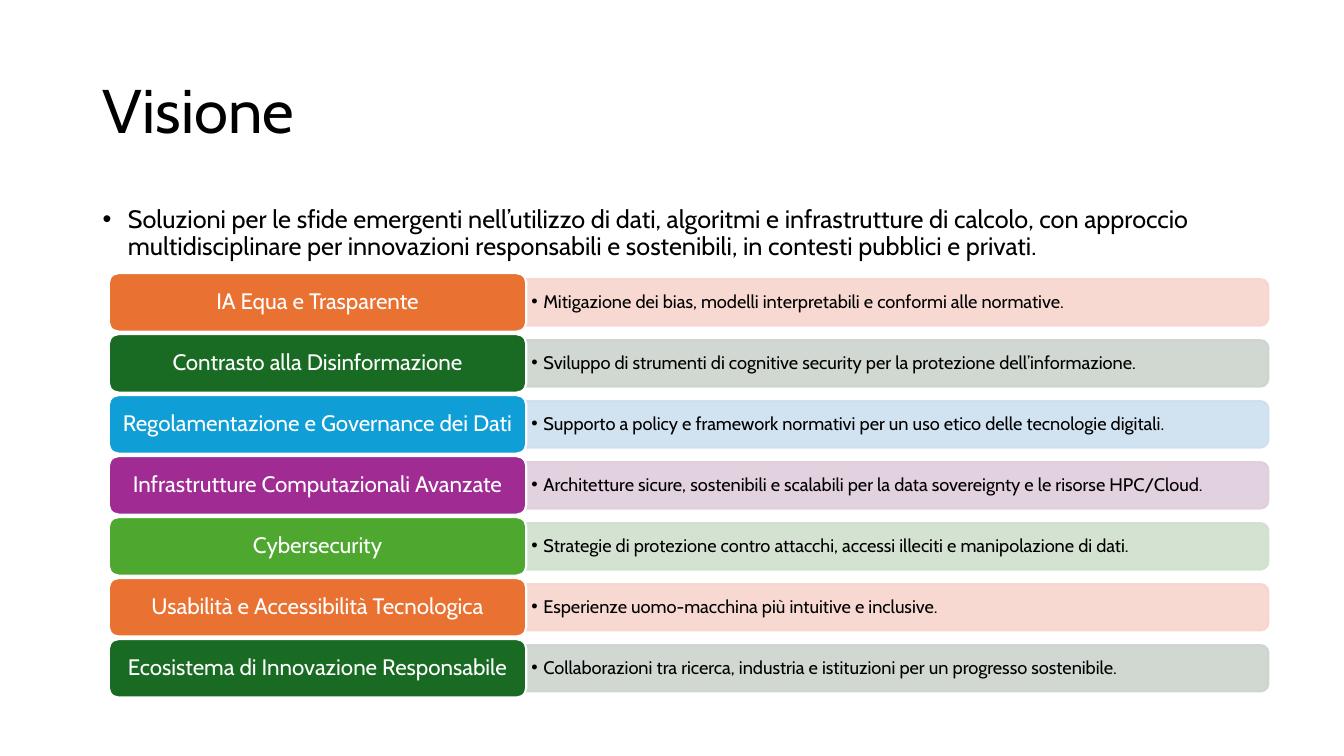
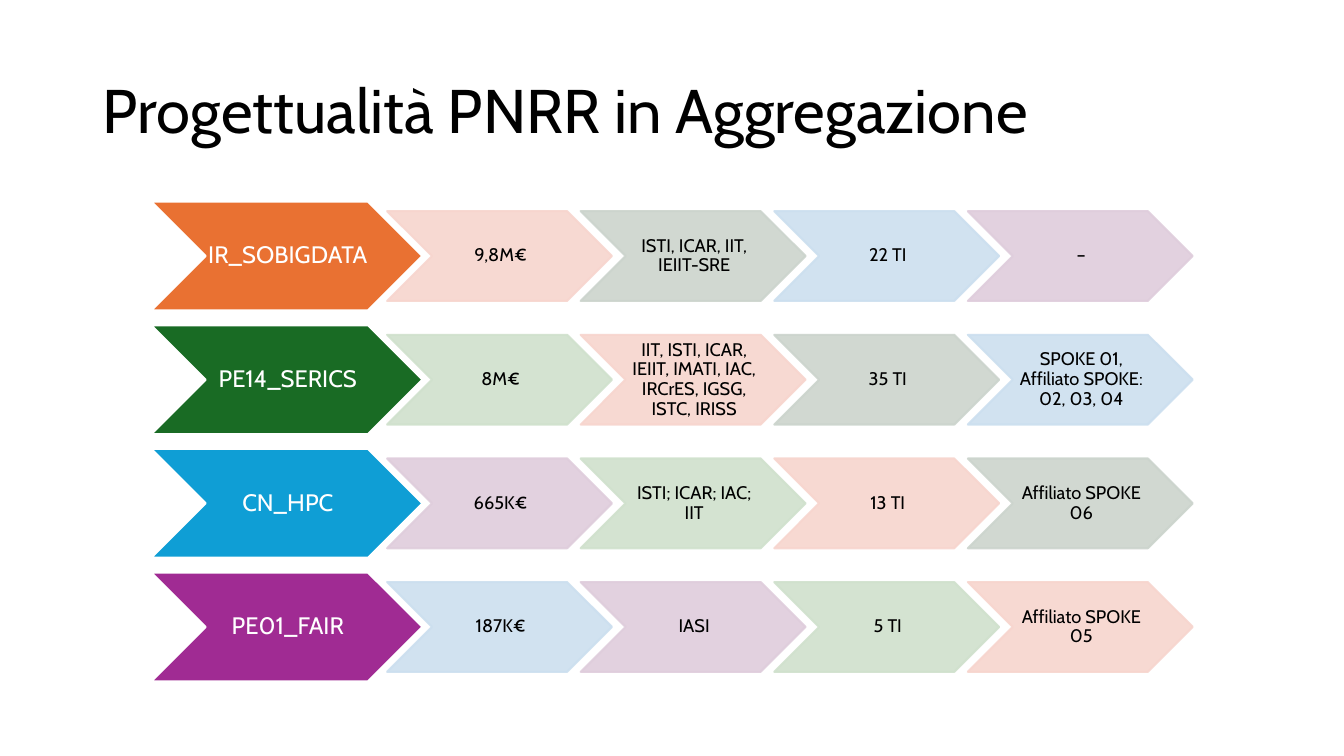
from lxml.etree import SubElement
from pptx import Presentation
from pptx.dml.color import RGBColor
from pptx.enum.shapes import MSO_SHAPE
from pptx.enum.text import MSO_ANCHOR, MSO_AUTO_SIZE, PP_ALIGN
from pptx.oxml.ns import qn
from pptx.util import Inches, Pt

FONT = "Cabin"
BLACK, WHITE = "000000", "FFFFFF"
DARK = ["E97132", "196B24", "0F9ED5", "A02B93", "4EA72E"]
PALE = ["F7D5CE", "CCD4CD", "CCDFEF", "DFCDDC", "D0E1CD"]
TITLE = (0.92, 0.4, 11.5, 1.45)

GOALS = [
    ("IA Equa e Trasparente", "Mitigazione dei bias, modelli interpretabili e conformi alle normative."),
    ("Contrasto alla Disinformazione",
     "Sviluppo di strumenti di cognitive security per la protezione dell’informazione."),
    ("Regolamentazione e Governance dei Dati",
     "Supporto a policy e framework normativi per un uso etico delle tecnologie digitali."),
    ("Infrastrutture Computazionali Avanzate",
     "Architetture sicure, sostenibili e scalabili per la data sovereignty e le risorse HPC/Cloud."),
    ("Cybersecurity", "Strategie di protezione contro attacchi, accessi illeciti e manipolazione di dati."),
    ("Usabilità e Accessibilità Tecnologica", "Esperienze uomo-macchina più intuitive e inclusive."),
    ("Ecosistema di Innovazione Responsabile",
     "Collaborazioni tra ricerca, industria e istituzioni per un progresso sostenibile."),
]
INTRO = ("Soluzioni per le sfide emergenti nell’utilizzo di dati, algoritmi e infrastrutture di calcolo, "
         "con approccio multidisciplinare per innovazioni responsabili e sostenibili, "
         "in contesti pubblici e privati.")
GRANTS = [
    ("IR_SOBIGDATA", "9,8M€", "ISTI, ICAR, IIT, IEIIT-SRE", "22 TI", "–"),
    ("PE14_SERICS", "8M€", "IIT, ISTI, ICAR, IEIIT, IMATI, IAC, IRCrES, IGSG, ISTC, IRISS", "35 TI",
     "SPOKE 01, Affiliato SPOKE: 02, 03, 04"),
    ("CN_HPC", "665K€", "ISTI; ICAR; IAC; IIT", "13 TI", "Affiliato SPOKE 06"),
    ("PE01_FAIR", "187K€", "IASI", "5 TI", "Affiliato SPOKE 05"),
]


def tint(code):
    return RGBColor.from_string(code)


def place(box):
    return [Inches(side) for side in box]


def write(frame, words, size, code=BLACK, pads=(0.1, 0.05, 0.1, 0.05),
          align=PP_ALIGN.LEFT, anchor=MSO_ANCHOR.MIDDLE, indent=0):
    frame.word_wrap = True
    frame.auto_size = MSO_AUTO_SIZE.NONE
    frame.vertical_anchor = anchor
    frame.margin_left, frame.margin_top, frame.margin_right, frame.margin_bottom = place(pads)
    para = frame.paragraphs[0]
    para.alignment = align
    para.line_spacing = 0.9
    if indent:
        props = para._p.get_or_add_pPr()
        props.set("marL", str(Inches(indent)))
        props.set("indent", str(-Inches(indent)))
        SubElement(props, qn("a:buFont"), typeface="Arial")
        SubElement(props, qn("a:buChar"), char="•")
    run = para.add_run()
    run.text = words
    run.font.name = FONT
    run.font.size = Pt(size)
    run.font.color.rgb = tint(code)


def draw(slide, kind, box, fill, edge, alpha=100):
    shape = slide.shapes.add_shape(kind, *place(box))
    shape.shadow.inherit = False
    shape.fill.solid()
    shape.fill.fore_color.rgb = tint(fill)
    shape.line.color.rgb = tint(edge)
    shape.line.width = Pt(1.5)
    if alpha < 100:
        for node in shape.element.spPr.iter(qn("a:srgbClr")):
            SubElement(node, qn("a:alpha"), val=str(alpha * 1000))
    return shape


def label(slide, words, box, size, **style):
    text = slide.shapes.add_textbox(*place(box))
    write(text.text_frame, words, size, **style)


def start(deck, words):
    slide = deck.slides.add_slide(deck.slide_layouts[5])
    title = slide.shapes.title
    title.left, title.top, title.width, title.height = place(TITLE)
    write(title.text_frame, words, 44)
    return slide


def goal(slide, box, name, note, dark, pale):
    left, top, width, height = box
    head, thick = 4.14, 0.46
    long = width - head
    mid = top + height / 2
    band = (left + head + (long - thick) / 2, mid - long / 2, thick, long)
    bar = draw(slide, MSO_SHAPE.ROUND_2_SAME_RECTANGLE, band, pale, pale, 90)
    bar.rotation = 90
    label(slide, note, (left + head, mid - 0.21, long - 0.02, 0.42), 13,
          pads=(0.05, 0.03, 0.05, 0.03), indent=0.12)
    tab = draw(slide, MSO_SHAPE.ROUNDED_RECTANGLE, (left, top, head, height), dark, WHITE)
    write(tab.text_frame, name, 16, WHITE, (0.07, 0.03, 0.07, 0.03), PP_ALIGN.CENTER)


def goals(slide, box):
    left, top, width, height = box
    tall = 0.58
    step = (height - tall) / (len(GOALS) - 1)
    for row, (name, note) in enumerate(GOALS):
        hue = row % len(DARK)
        goal(slide, (left, top + row * step, width, tall), name, note, DARK[hue], PALE[hue])


def arrow(slide, box, words, size, ink, *paint):
    shape = draw(slide, MSO_SHAPE.CHEVRON, box, *paint)
    write(shape.text_frame, words, size, ink, (0.02, 0.01, 0, 0.01), PP_ALIGN.CENTER)


def grants(slide, box):
    left, top, width, height = box
    tall, low = 1.08, 0.89
    head, wide, first = 2.69, 2.23, 2.34
    step = (height - tall) / (len(GRANTS) - 1)
    pitch = (width - first - wide) / (len(GRANTS[0]) - 2)
    for row, (name, *facts) in enumerate(GRANTS):
        y = top + row * step
        arrow(slide, (left, y, head, tall), name, 17, WHITE, DARK[row], WHITE)
        for col, fact in enumerate(facts):
            pale = PALE[(row * len(facts) + col) % len(PALE)]
            spot = (left + first + col * pitch, y + (tall - low) / 2, wide, low)
            arrow(slide, spot, fact, 13, BLACK, pale, pale, 90)


def main():
    deck = Presentation()
    deck.slide_width, deck.slide_height = Inches(13.33), Inches(7.5)
    vision = start(deck, "Visione")
    label(vision, INTRO, (0.92, 2, 11.5, 0.7), 18, anchor=MSO_ANCHOR.TOP, indent=0.25)
    goals(vision, (1.08, 2.71, 11.5, 4.21))
    funds = start(deck, "Progettualità PNRR in Aggregazione")
    grants(funds, (1.5, 2, 10.33, 4.76))
    deck.save("out.pptx")


if __name__ == "__main__":
    main()
